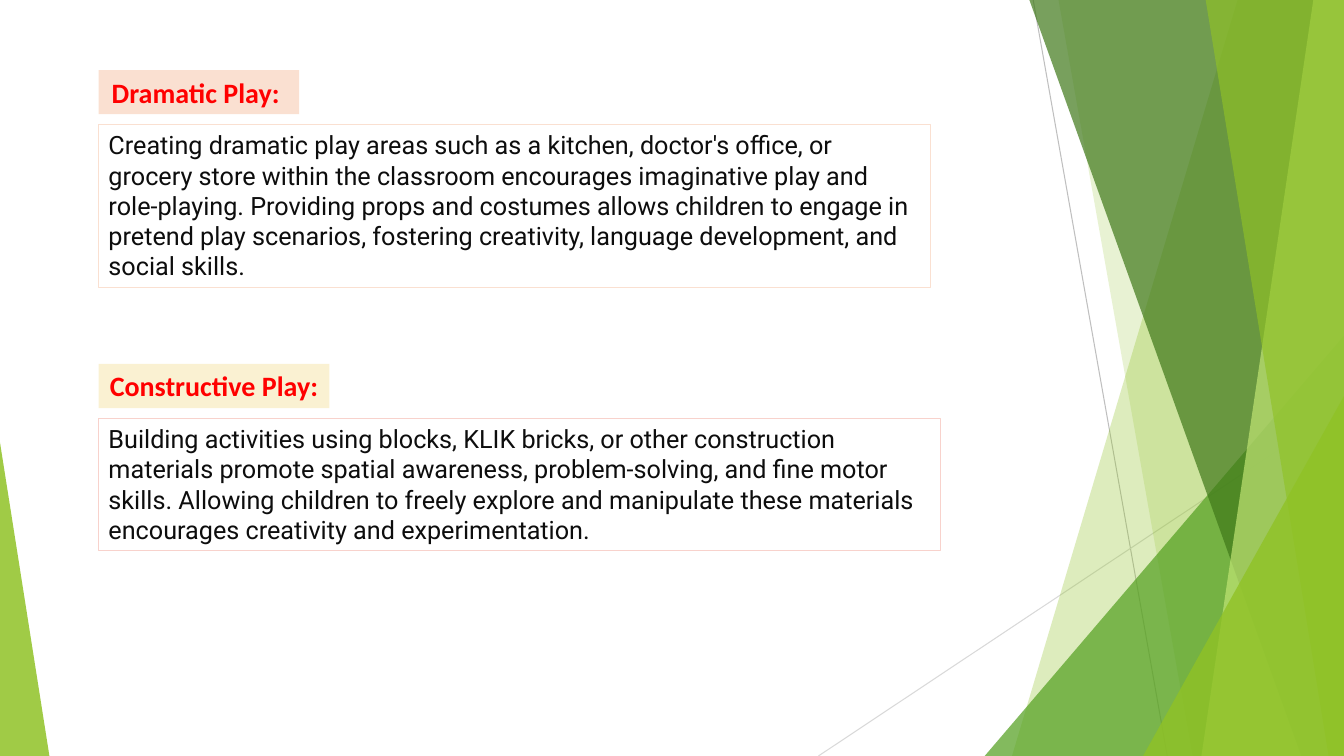
"""Build a slide on dramatic and constructive play beside a fan of green facets."""
from dataclasses import dataclass
from typing import Optional, Union

from lxml import etree
from pptx import Presentation
from pptx import util as u
from pptx.dml import color
from pptx.enum import shapes, text
from pptx.oxml import ns

WIDE, HIGH = 960, 540


@dataclass(frozen=True)
class Theme:
    """Colours, fonts and type sizes."""
    lime: str = "90C226"
    pale: str = "C0E474"
    leaf: str = "54A021"
    moss: str = "3F7819"
    steel: str = "BFBFBF"
    mist: str = "D9D9D9"
    peach: str = "FAE0D1"
    cream: str = "FAF1D2"
    rose: str = "F8D2CC"
    red: str = "FF0000"
    ink: str = "0D0D0D"
    head: str = "Calibri"
    body: str = "Roboto"
    large: int = 20
    small: int = 18
    hair: float = 0.75


T = Theme()


@dataclass(frozen=True)
class Ray:
    """Thin line between two points."""
    x1: float
    y1: float
    x2: float
    y2: float
    tint: str


@dataclass(frozen=True)
class Facet:
    """Sheet from a slanted left edge to the right side of the slide."""
    top: float
    base: float
    tint: str
    alpha: int


@dataclass(frozen=True)
class Wedge:
    """Right-angled triangle standing on the bottom of the slide."""
    left: float
    top: float
    width: float
    apex: int
    tint: str
    alpha: int


@dataclass(frozen=True)
class Topic:
    """Heading label with a framed paragraph below it."""
    top: float
    title: str
    span: float
    tint: str
    wrap: bool
    body: str
    width: float
    height: float
    edge: str


RAYS = (Ray(738, 0, 833.8, HIGH, T.steel), Ray(WIDE, 290.2, 584.6, HIGH, T.mist))
PARTS = (
    Facet(884.2, 722.9, T.lime, 30),
    Facet(756, 851.8, T.lime, 20),
    Wedge(703.4, 239.8, 256.6, 1, T.leaf, 72),
    Facet(735.1, 929.5, T.moss, 70),
    Facet(938.2, 858.2, T.pale, 70),
    Facet(861.1, 949, T.lime, 65),
    Wedge(816.5, 283, 143.5, 1, T.lime, 80),
    Wedge(0, 316.1, 35.3, 0, T.lime, 85),
)
TOPICS = (
    Topic(50.1, "Dramatic Play: ", 143.3, T.peach, True,
          "Creating dramatic play areas such as a kitchen, doctor's office, or grocery store "
          "within the classroom encourages imaginative play and role-playing. Providing props "
          "and costumes allows children to engage in pretend play scenarios, fostering "
          "creativity, language development, and social skills.", 594, 116.6, T.peach),
    Topic(260, "Constructive Play:", 164.9, T.cream, False,
          "Building activities using blocks, KLIK bricks, or other construction materials "
          "promote spatial awareness, problem-solving, and fine motor skills. Allowing children "
          "to freely explore and manipulate these materials encourages creativity and "
          "experimentation.", 601.2, 94.3, T.rose),
)


def rgb(tint: str) -> color.RGBColor:
    """Turn a hex string into a colour."""
    return color.RGBColor.from_string(tint)


def draw_ray(slide, ray: Ray) -> None:
    """Draw a thin line without a shadow."""
    ends = (u.Pt(n) for n in (ray.x1, ray.y1, ray.x2, ray.y2))
    line = slide.shapes.add_connector(shapes.MSO_CONNECTOR.STRAIGHT, *ends)
    line.line.color.rgb = rgb(ray.tint)
    line.line.width = u.Pt(T.hair)
    etree.SubElement(line._element.spPr, ns.qn("a:effectLst"))


def draw_part(slide, part: Union[Facet, Wedge]) -> None:
    """Draw one translucent facet or wedge."""
    if isinstance(part, Facet):
        pen = slide.shapes.build_freeform(u.Pt(part.top), u.Pt(-0.6))
        rest = ((WIDE, -0.6), (WIDE, HIGH), (part.base, HIGH))
        pen.add_line_segments([(u.Pt(x), u.Pt(y)) for x, y in rest], close=True)
        shape = pen.convert_to_shape()
    else:
        area = (u.Pt(n) for n in (part.left, part.top, part.width, HIGH - part.top))
        shape = slide.shapes.add_shape(shapes.MSO_SHAPE.ISOSCELES_TRIANGLE, *area)
        shape.adjustments[0] = part.apex
    shape.shadow.inherit = False
    shape.line.fill.background()
    shape.fill.solid()
    shape.fill.fore_color.rgb = rgb(part.tint)
    tone = shape._element.spPr.find(ns.qn("a:solidFill")).find(ns.qn("a:srgbClr"))
    etree.SubElement(tone, ns.qn("a:alpha")).set("val", str(part.alpha * 1000))


def write(slide, words: str, *, top: float, width: float, height: float, font: str,
          size: int, ink: str, bold: bool = False, wrap: bool = True,
          align: text.PP_ALIGN = text.PP_ALIGN.LEFT,
          fill: Optional[str] = None, edge: Optional[str] = None) -> None:
    """Write text in a box on the shared left margin."""
    box = slide.shapes.add_textbox(*(u.Pt(n) for n in (70.4, top, width, height)))
    if fill:
        box.fill.solid()
        box.fill.fore_color.rgb = rgb(fill)
    if edge:
        box.line.color.rgb = rgb(edge)
        box.line.width = u.Pt(T.hair)
    frame = box.text_frame
    frame.word_wrap = wrap
    frame.auto_size = text.MSO_AUTO_SIZE.SHAPE_TO_FIT_TEXT
    para = frame.paragraphs[0]
    para.alignment = align
    run = para.add_run()
    run.text = words
    run.font.name = font
    run.font.size = u.Pt(size)
    run.font.bold = bold
    run.font.color.rgb = rgb(ink)


def draw_topic(slide, topic: Topic) -> None:
    """Draw a heading and its paragraph."""
    write(slide, topic.title, top=topic.top, width=topic.span, height=31.5,
          font=T.head, size=T.large, ink=T.red, bold=True, wrap=topic.wrap,
          align=text.PP_ALIGN.CENTER, fill=topic.tint)
    write(slide, topic.body, top=topic.top + 38.9, width=topic.width,
          height=topic.height, font=T.body, size=T.small, ink=T.ink, edge=topic.edge)


def main() -> None:
    """Build and save the deck."""
    deck = Presentation()
    deck.slide_width, deck.slide_height = u.Pt(WIDE), u.Pt(HIGH)
    slide = deck.slides.add_slide(deck.slide_layouts[6])
    for ray in RAYS:
        draw_ray(slide, ray)
    for part in PARTS:
        draw_part(slide, part)
    for topic in TOPICS:
        draw_topic(slide, topic)
    deck.save("out.pptx")


if __name__ == "__main__":
    main()
